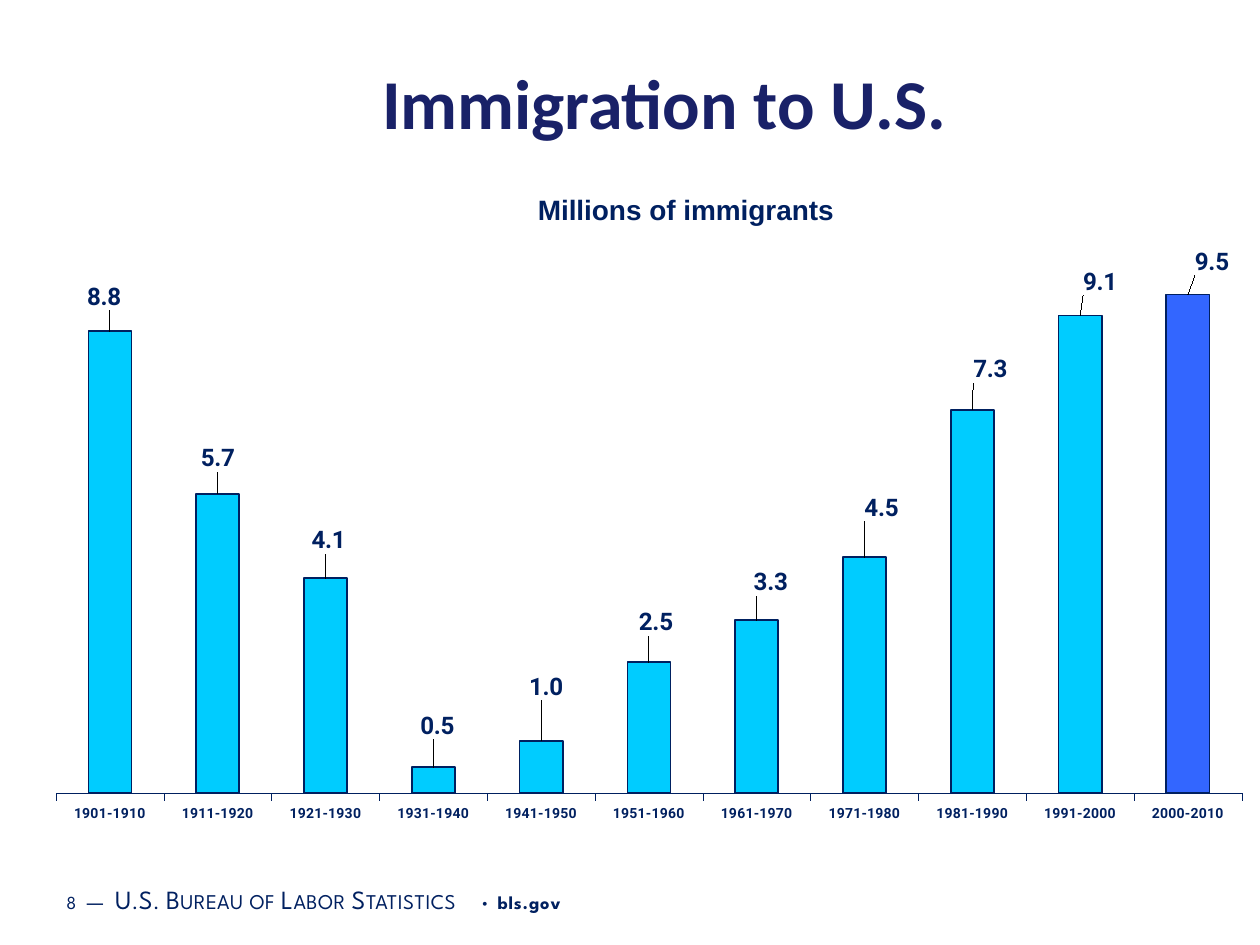
from lxml import etree
from pptx import Presentation
from pptx import util as u
from pptx.chart import data as chart_data
from pptx.dml.color import RGBColor
from pptx.enum import chart as kinds, text
from pptx.oxml.ns import qn

PX = 914400 / 126
COLORS = {"navy": "002060", "title": "192168", "bar": "00CCFF", "latest": "3366FF"}
DECADES = [f"{year}-{year + 9}" for year in range(1901, 2000, 10)] + ["2000-2010"]
MILLIONS = [8.8, 5.7, 4.1, 0.5, 1.0, 2.5, 3.3, 4.5, 7.3, 9.1, 9.5]
LABEL_SHIFTS = [(-6, -16), (0, -17), (3, -19), (4, -23), (5, -35), (7, -21),
                (14, -19), (17, -31), (18, -22), (20, -15), (24, -14)]


def px(length):
    """Turn pixels into EMU."""
    return u.Emu(round(length * PX))


def color(name):
    """Look up a palette colour."""
    return RGBColor.from_string(COLORS[name])


def style_font(font, size, face, name="navy", bold=True):
    """Apply size, face, colour and weight to a font."""
    font.size, font.name, font.bold = u.Pt(size), face, bold
    font.color.rgb = color(name)


def add_span(para, words, size, face, name="navy", bold=True, spacing=0, small_caps=False):
    """Add one formatted run to a paragraph."""
    span = para.add_run()
    span.text = words
    style_font(span.font, size, face, name, bold)
    properties = span._r.get_or_add_rPr()
    if spacing:
        properties.set("spc", str(spacing))
    if small_caps:
        properties.set("cap", "small")


def place(shape, box):
    """Move a shape to a pixel box."""
    shape.left, shape.top, shape.width, shape.height = map(px, box)


def add_text_box(page, box):
    """Add a wrapped, vertically centred text box and return its paragraph."""
    frame = page.shapes.add_textbox(*map(px, box)).text_frame
    frame.word_wrap = True
    frame.vertical_anchor = text.MSO_ANCHOR.MIDDLE
    return frame.paragraphs[0]


def set_layout(parent, index, **values):
    """Give a chart element a manual layout."""
    for old in parent.findall(qn("c:layout")):
        parent.remove(old)
    layout = etree.Element(qn("c:layout"))
    manual = etree.SubElement(layout, qn("c:manualLayout"))
    for tag, value in values.items():
        etree.SubElement(manual, qn(f"c:{tag}")).set("val", str(value))
    parent.insert(index, layout)


def add_title(page, box):
    """Fill the title placeholder."""
    title = page.shapes.title
    place(title, box)
    frame = title.text_frame
    frame.vertical_anchor = text.MSO_ANCHOR.TOP
    para = frame.paragraphs[0]
    para.alignment = text.PP_ALIGN.CENTER
    add_span(para, "Immigration to U.S.", 40, "Calibri", "title")


def add_subtitle(page, box):
    """Add the unit heading of the chart."""
    para = add_text_box(page, box)
    para.alignment = text.PP_ALIGN.CENTER
    add_span(para, "Millions of immigrants", 16, "Arial")


def add_labels(series, width, height):
    """Label every bar and shift each label by its pixel offset."""
    for index in range(len(MILLIONS)):
        label = series.points[index].data_label
        style_font(label.font, 13.8, "Roboto")
        label.position = kinds.XL_LABEL_POSITION.OUTSIDE_END
    for element, (across, down) in zip(series._element.iter(qn("c:dLbl")), LABEL_SHIFTS):
        set_layout(element, 1, x=across / width, y=down / height)
        number = etree.Element(qn("c:numFmt"), formatCode="0.0", sourceLinked="0")
        element.insert(2, number)


def add_immigration_chart(page, box):
    """Add the column chart of immigrants by decade."""
    data = chart_data.CategoryChartData(number_format="0.0")
    data.categories = DECADES
    data.add_series("Series 1", MILLIONS)
    chart = page.shapes.add_chart(
        kinds.XL_CHART_TYPE.COLUMN_CLUSTERED, *map(px, box), data).chart
    chart.has_title = chart.has_legend = False
    style_font(chart.font, 20, "Roboto")
    values, decades = chart.value_axis, chart.category_axis
    values.visible = values.has_major_gridlines = False
    values.minimum_scale, values.maximum_scale = 0, 10.13
    decades.major_tick_mark = kinds.XL_TICK_MARK.OUTSIDE
    decades.tick_label_position = kinds.XL_TICK_LABEL_POSITION.LOW
    style_font(decades.tick_labels.font, 8, "Roboto")
    decades.format.line.color.rgb = color("navy")
    decades.format.line.width = u.Pt(0.25)
    plot = chart.plots[0]
    plot.gap_width, plot.vary_by_categories = 150, False
    series = plot.series[0]
    for part, name in ((series, "bar"), (series.points[len(MILLIONS) - 1], "latest")):
        part.format.fill.solid()
        part.format.fill.fore_color.rgb = color(name)
        part.format.line.color.rgb = color("navy")
        part.format.line.width = u.Pt(1)
    add_labels(series, *box[2:])
    area = chart._chartSpace.find(".//" + qn("c:plotArea"))
    set_layout(area, 0, layoutTarget="inner", xMode="edge", yMode="edge",
               x=0.01, y=0.02, w=0.98, h=0.88)


def add_footer(page, box):
    """Add the page number and agency line."""
    para = add_text_box(page, box)
    pieces = [("8", 10.5, 50, False, False), ("\u2004", 16, 0, False, False),
              ("—", 15, 30, True, False), ("\u2004", 16, 50, False, False),
              ("U.S. Bureau of Labor Statistics", 15, 30, True, False),
              ("\u2004•\u2004", 10.5, 50, False, False), ("bls.gov", 10.5, 50, False, True)]
    for words, size, spacing, small_caps, bold in pieces:
        add_span(para, words, size, "League Spartan", bold=bold,
                 spacing=spacing, small_caps=small_caps)


def main():
    """Build and save the slide."""
    deck = Presentation()
    deck.slide_width, deck.slide_height = px(1260), px(945)
    page = deck.slides.add_slide(deck.slide_layouts[5])
    add_footer(page, (54, 873, 798, 50))
    add_title(page, (139, 53, 1050, 147))
    add_immigration_chart(page, (44, 248, 1210, 606))
    add_subtitle(page, (439, 186, 494, 47))
    deck.save("out.pptx")


if __name__ == "__main__":
    main()
